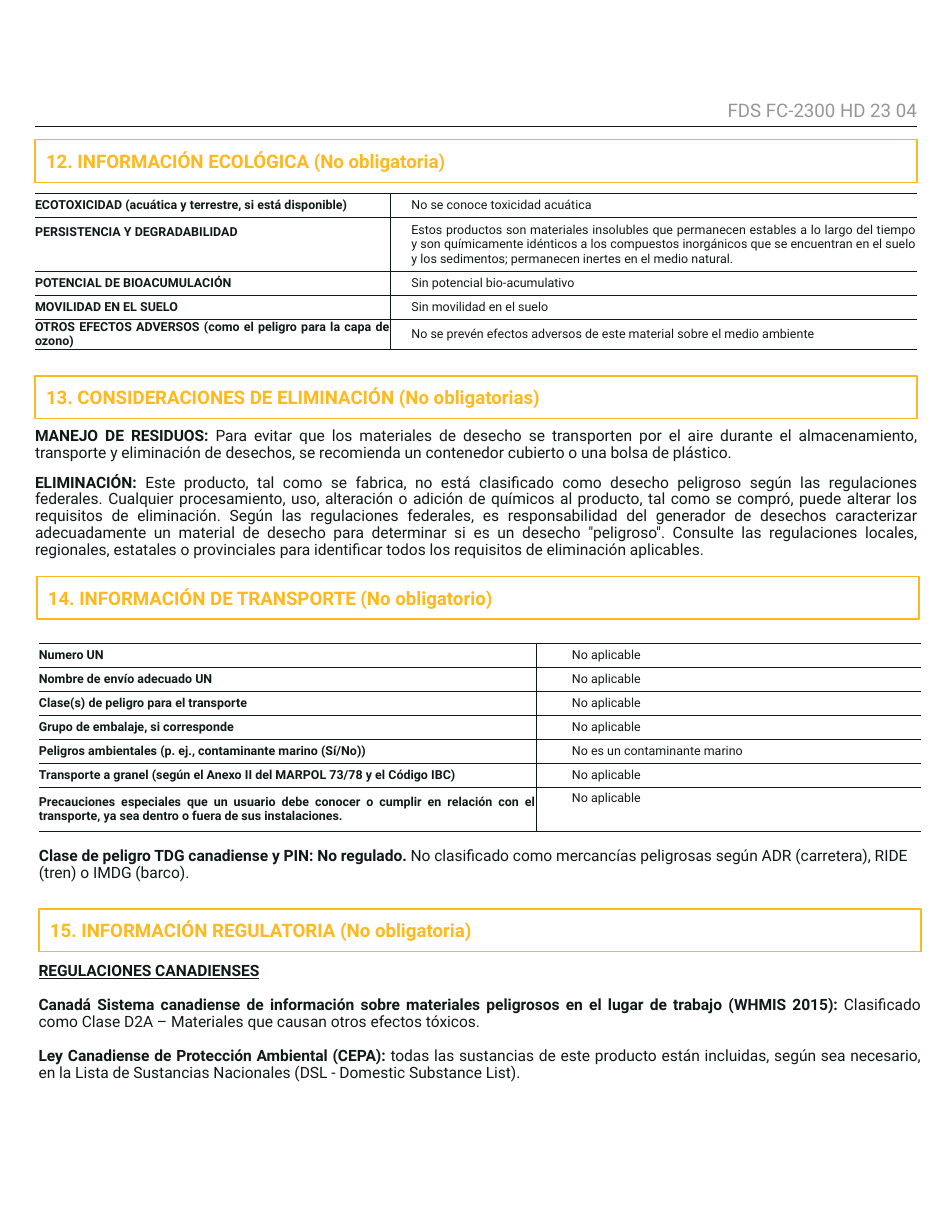
from dataclasses import dataclass

import pptx
import pptx.dml.color
import pptx.enum.shapes
import pptx.enum.text
import pptx.oxml
import pptx.oxml.ns
import pptx.util

Pt = pptx.util.Pt
Align = pptx.enum.text.PP_ALIGN
Anchor = pptx.enum.text.MSO_ANCHOR


@dataclass(frozen=True)
class Theme:
    font: str = "Roboto"
    ink: str = "0F1919"
    gray: str = "969696"
    accent: str = "FFB81D"
    paper: str = "FFFFFF"
    heading_size: float = 12
    body_size: float = 10
    table_size: float = 8
    border: float = 0.25


THEME = Theme()
CONTENT_WIDTH = 567

ECOLOGY = [
    ("ECOTOXICIDAD (acuática y terrestre, si está disponible)", "No se conoce toxicidad acuática"),
    ("PERSISTENCIA Y DEGRADABILIDAD",
     "Estos productos son materiales insolubles que permanecen estables a lo largo del tiempo y son "
     "químicamente idénticos a los compuestos inorgánicos que se encuentran en el suelo y los sedimentos; "
     "permanecen inertes en el medio natural."),
    ("POTENCIAL DE BIOACUMULACIÓN", "Sin potencial bio-acumulativo"),
    ("MOVILIDAD EN EL SUELO", "Sin movilidad en el suelo"),
    ("OTROS EFECTOS ADVERSOS (como el peligro para la capa de ozono)",
     "No se prevén efectos adversos de este material sobre el medio ambiente"),
]

TRANSPORT = [
    ("Numero UN", "No aplicable"),
    ("Nombre de envío adecuado UN", "No aplicable"),
    ("Clase(s) de peligro para el transporte", "No aplicable"),
    ("Grupo de embalaje, si corresponde", "No aplicable"),
    ("Peligros ambientales (p. ej., contaminante marino (Sí/No))", "No es un contaminante marino"),
    ("Transporte a granel (según el Anexo II del MARPOL 73/78 y el Código IBC)", "No aplicable"),
    ("Precauciones especiales que un usuario debe conocer o cumplir en relación con el transporte, "
     "ya sea dentro o fuera de sus instalaciones.", "No aplicable"),
]

DISPOSAL = [
    ("MANEJO DE RESIDUOS: ",
     "Para evitar que los materiales de desecho se transporten por el aire durante el almacenamiento, "
     "transporte y eliminación de desechos, se recomienda un contenedor cubierto o una bolsa de plástico."),
    ("ELIMINACIÓN: ",
     "Este producto, tal como se fabrica, no está clasificado como desecho peligroso según las regulaciones "
     "federales. Cualquier procesamiento, uso, alteración o adición de químicos al producto, tal como se "
     "compró, puede alterar los requisitos de eliminación. Según las regulaciones federales, es "
     "responsabilidad del generador de desechos caracterizar adecuadamente un material de desecho para "
     "determinar si es un desecho \"peligroso\". Consulte las regulaciones locales, regionales, estatales o "
     "provinciales para identificar todos los requisitos de eliminación aplicables."),
]

CANADIAN_CLASS = [
    ("Clase de peligro TDG canadiense y PIN: No regulado. ",
     "No clasificado como mercancías peligrosas según ADR (carretera), RIDE (tren) o IMDG (barco)."),
]

REGULATIONS = [
    ("REGULACIONES CANADIENSES", ""),
    ("Canadá Sistema canadiense de información sobre materiales peligrosos en el lugar de trabajo "
     "(WHMIS 2015): ",
     "Clasificado como Clase D2A – Materiales que causan otros efectos tóxicos."),
    ("Ley Canadiense de Protección Ambiental (CEPA): ",
     "todas las sustancias de este producto están incluidas, según sea necesario, en la Lista de "
     "Sustancias Nacionales (DSL - Domestic Substance List)."),
]


def rgb(value):
    return pptx.dml.color.RGBColor.from_string(value)


def style_span(span, size, color=THEME.ink, bold=False):
    span.font.name = THEME.font
    span.font.size = Pt(size)
    span.font.color.rgb = rgb(color)
    span.font.bold = bold


def set_margins(target, top=0, bottom=0):
    target.margin_left = target.margin_right = 0
    target.margin_top, target.margin_bottom = Pt(top), Pt(bottom)


def add_text_box(page, left, top, width, height, top_margin=0):
    box = page.shapes.add_textbox(Pt(left), Pt(top), Pt(width), Pt(height))
    box.text_frame.word_wrap = True
    set_margins(box.text_frame, top=top_margin)
    return box


def add_header(page):
    rule = page.shapes.add_connector(pptx.enum.shapes.MSO_CONNECTOR.STRAIGHT,
                                     Pt(22.5), Pt(81.3), Pt(589.5), Pt(81.3))
    rule.line.color.rgb = rgb(THEME.ink)
    rule.line.width = Pt(1)
    properties = rule._element.find(pptx.oxml.ns.qn("p:spPr"))
    properties.append(pptx.oxml.parse_xml(f'<a:effectLst {pptx.oxml.ns.nsdecls("a")}/>'))
    box = add_text_box(page, 342.5, 55.5, 247, 26, top_margin=9.7)
    para = box.text_frame.paragraphs[0]
    para.text = "FDS FC-2300 HD 23 04"
    para.alignment = Align.RIGHT
    para.line_spacing = 0.9
    style_span(para.runs[0], THEME.heading_size, THEME.gray)


def add_heading(page, left, top, title):
    shape = page.shapes.add_shape(pptx.enum.shapes.MSO_SHAPE.RECTANGLE,
                                  Pt(left), Pt(top), Pt(CONTENT_WIDTH), Pt(27.4))
    shape.shadow.inherit = False
    shape.fill.solid()
    shape.fill.fore_color.rgb = rgb(THEME.paper)
    shape.line.color.rgb = rgb(THEME.accent)
    shape.line.width = Pt(1)
    shape.text_frame.vertical_anchor = Anchor.MIDDLE
    para = shape.text_frame.paragraphs[0]
    para.text = title
    para.alignment = Align.JUSTIFY
    style_span(para.runs[0], THEME.heading_size, THEME.accent, bold=True)


def add_body(page, left, top, height, entries, gap=8.5, alignment=Align.JUSTIFY):
    frame = add_text_box(page, left, top, CONTENT_WIDTH, height).text_frame
    for index, (label, text) in enumerate(entries):
        para = frame.add_paragraph() if index else frame.paragraphs[0]
        para.alignment = alignment
        para.line_spacing = 0.9
        if index:
            para.space_before = Pt(gap)
        for words, bold in ((label, True), (text, False)):
            if words:
                span = para.add_run()
                span.text = words
                style_span(span, THEME.body_size, bold=bold)
    return frame


def set_borders(cell, visible):
    properties = cell._tc.get_or_add_tcPr()
    for side in "LRTB":
        paint = (f'<a:solidFill><a:srgbClr val="{THEME.ink}"/></a:solidFill>'
                 if side in visible else "<a:noFill/>")
        properties.append(pptx.oxml.parse_xml(
            f'<a:ln{side} {pptx.oxml.ns.nsdecls("a")} w="{Pt(THEME.border)}">{paint}</a:ln{side}>'))
    cell.fill.background()


def add_data_table(page, left, top, widths, heights, rows, indent):
    frame = page.shapes.add_table(len(rows), 2, Pt(left), Pt(top), Pt(sum(widths)), Pt(sum(heights)))
    table = frame.table
    table.first_row = table.horz_banding = False
    for column, width in zip(table.columns, widths):
        column.width = Pt(width)
    for row, height, texts in zip(table.rows, heights, rows):
        row.height = Pt(height)
        for index, (cell, text) in enumerate(zip(row.cells, texts)):
            para = cell.text_frame.paragraphs[0]
            para.text = text
            para.alignment = Align.JUSTIFY
            style_span(para.runs[0], THEME.table_size, bold=index == 0)
            cell.vertical_anchor = Anchor.MIDDLE
            set_margins(cell, *((2.9, 2.9) if index else (0, 0)))
            if index:
                para._p.get_or_add_pPr().set("marL", str(Pt(indent)))
            set_borders(cell, "LTB" if index else "RTB")
    return table


def main():
    deck = pptx.Presentation()
    deck.slide_width, deck.slide_height = Pt(612), Pt(792)
    page = deck.slides.add_slide(deck.slide_layouts[6])

    add_header(page)
    add_heading(page, 22.5, 89.8, "12. INFORMACIÓN ECOLÓGICA (No obligatoria)")
    add_heading(page, 22.5, 241.7, "13. CONSIDERACIONES DE ELIMINACIÓN (No obligatorias)")
    add_body(page, 22.5, 275, 93, DISPOSAL)
    add_heading(page, 23.7, 370.6, "14. INFORMACIÓN DE TRANSPORTE (No obligatorio)")
    add_heading(page, 25, 584.4, "15. INFORMACIÓN REGULATORIA (No obligatoria)")
    regulations = add_body(page, 24.8, 619.2, 83.5, REGULATIONS, gap=11)
    regulations.paragraphs[0].runs[0].font.underline = True

    ecology = add_data_table(page, 22.5, 124.4, [228.3, 338.7], [15.5, 34, 15.4, 15.4, 18.8], ECOLOGY, 13.7)
    persistence = ecology.cell(1, 0)
    persistence.vertical_anchor = Anchor.TOP
    persistence.text_frame.paragraphs[0].line_spacing = 1.5

    transport = add_data_table(page, 25, 413.4, [319.7, 247.3], [15.4] * 6 + [28.8], TRANSPORT, 23)
    transport.cell(6, 1).vertical_anchor = Anchor.TOP
    add_body(page, 25, 545, 19.5, CANADIAN_CLASS, alignment=Align.LEFT)

    deck.save("out.pptx")


if __name__ == "__main__":
    main()
